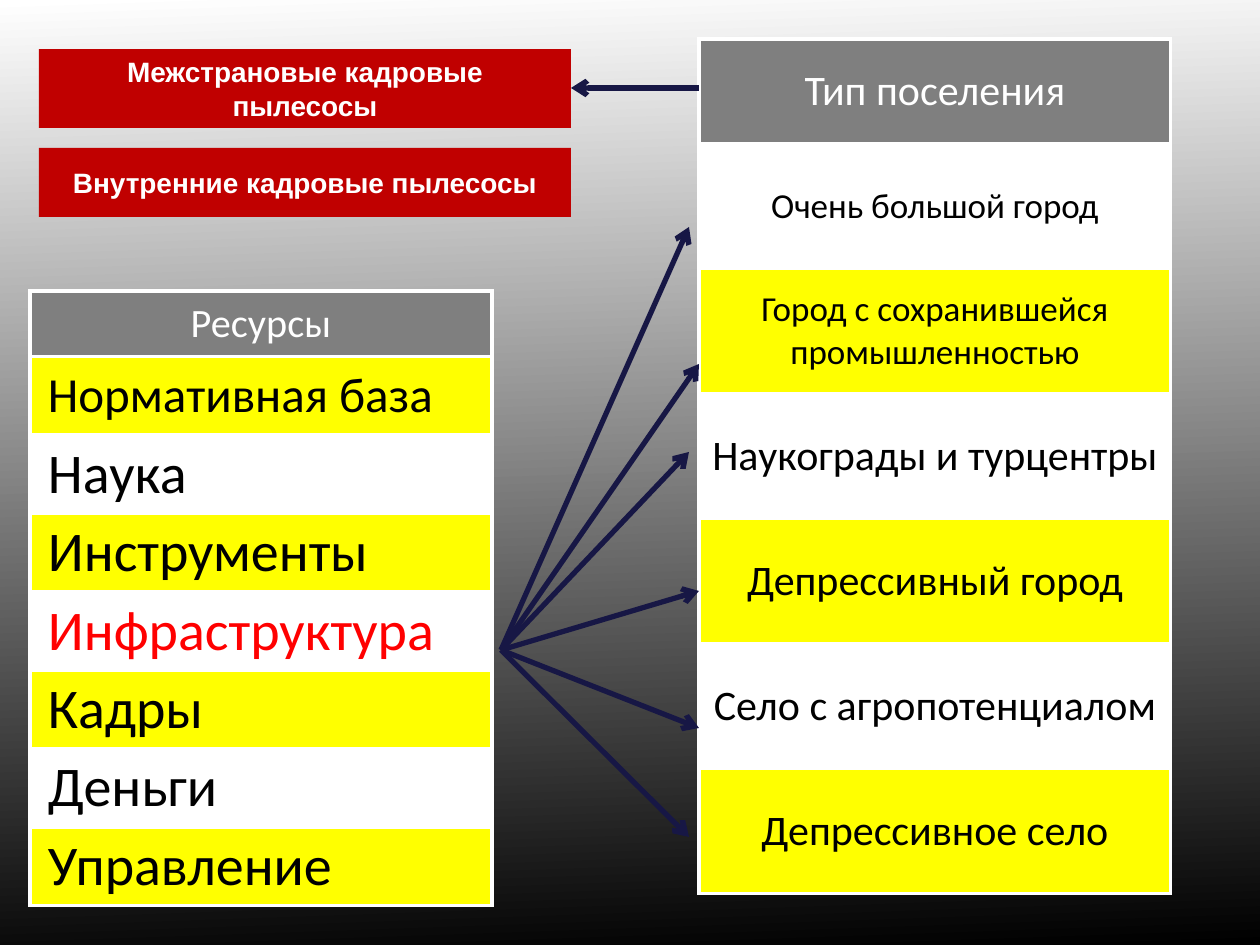
"""Build a slide linking resources to settlement types with arrows."""
import pptx
import pptx.dml.color
import pptx.enum.shapes
import pptx.enum.text
import pptx.oxml
import pptx.oxml.ns
import pptx.util

WHITE, BLACK, GREY, YELLOW = "FFFFFF", "000000", "7F7F7F", "FFFF00"
RED, CRIMSON, NAVY = "FF0000", "C00000", "171745"
ALIGN = pptx.enum.text.PP_ALIGN
MIDDLE = pptx.enum.text.MSO_ANCHOR.MIDDLE

RESOURCES = [
    ("Ресурсы", 23, WHITE),
    ("Нормативная база", 28, BLACK),
    ("Наука", 32, BLACK),
    ("Инструменты", 32, BLACK),
    ("Инфраструктура", 32, RED),
    ("Кадры", 32, BLACK),
    ("Деньги", 32, BLACK),
    ("Управление", 32, BLACK),
]
SETTLEMENTS = [
    ("Тип поселения", 24, WHITE),
    ("Очень большой город", 20, BLACK),
    ("Город с сохранившейся промышленностью", 20, BLACK),
    ("Наукограды и турцентры", 24, BLACK),
    ("Депрессивный город", 24, BLACK),
    ("Село с агропотенциалом", 24, BLACK),
    ("Депрессивное село", 24, BLACK),
]
DRAINS = [
    ("Межстрановые кадровые пылесосы", 49, 79),
    ("Внутренние кадровые пылесосы", 148, 69),
]
HUB = (501, 650)
TARGETS = [(689, 227), (699, 364), (689, 452), (699, 591), (699, 728), (689, 837)]
ARROWS = [(HUB, target) for target in TARGETS] + [((699, 88), (571, 88))]


def px(n):
    return pptx.util.Emu(round(n * 914400 / 126))


def rgb(color):
    return pptx.dml.color.RGBColor.from_string(color)


def paint(fill, color):
    fill.solid()
    fill.fore_color.rgb = rgb(color)


def write(tf, text, size, color, font, align, bold=False):
    p = tf.paragraphs[0]
    p.alignment = align
    r = p.add_run()
    r.text = text
    r.font.size = pptx.util.Pt(size)
    r.font.name = font
    r.font.bold = bold
    r.font.color.rgb = rgb(color)


def add_borders(cell):
    tc_pr = cell._tc.get_or_add_tcPr()
    for side in ("lnL", "lnR", "lnT", "lnB"):
        tc_pr.append(pptx.oxml.parse_xml(
            f'<a:{side} {pptx.oxml.ns.nsdecls("a")} w="25400"><a:solidFill>'
            f'<a:srgbClr val="{WHITE}"/></a:solidFill></a:{side}>'))


def add_list_table(s, rows, left, top, width, head_h, row_h, body_align, indent):
    heights = [head_h] + [row_h] * (len(rows) - 1)
    table = s.shapes.add_table(
        len(rows), 1, px(left), px(top), px(width), px(sum(heights))).table
    table.first_row = table.horz_banding = False
    for i, (text, size, color) in enumerate(rows):
        table.rows[i].height = px(heights[i])
        cell = table.cell(i, 0)
        add_borders(cell)
        paint(cell.fill, GREY if i == 0 else YELLOW if (i + len(rows)) % 2 else WHITE)
        cell.vertical_anchor = MIDDLE
        cell.margin_top = cell.margin_right = cell.margin_bottom = px(5)
        cell.margin_left = px(indent if i else 5)
        write(cell.text_frame, text, size, color, "Calibri",
              body_align if i else ALIGN.CENTER)


def add_arrow(s, start, end):
    line = s.shapes.add_connector(
        pptx.enum.shapes.MSO_CONNECTOR.STRAIGHT, *map(px, start + end))
    line.line.width = pptx.util.Pt(3)
    line.line.color.rgb = rgb(NAVY)
    ns = pptx.oxml.ns.nsdecls("a")
    line.line._get_or_add_ln().append(
        pptx.oxml.parse_xml(f'<a:tailEnd {ns} type="arrow"/>'))
    line._element.spPr.append(pptx.oxml.parse_xml(f"<a:effectLst {ns}/>"))


def add_drain(s, text, top, height):
    sp = s.shapes.add_shape(pptx.enum.shapes.MSO_SHAPE.RECTANGLE,
                            px(39), px(top), px(532), px(height))
    sp.shadow.inherit = False
    paint(sp.fill, CRIMSON)
    sp.line.fill.background()
    tf = sp.text_frame
    tf.word_wrap = True
    tf.vertical_anchor = MIDDLE
    write(tf, text, 16, WHITE, "Arial", ALIGN.CENTER, True)


def main():
    prs = pptx.Presentation()
    prs.slide_width, prs.slide_height = px(1260), px(945)
    s = prs.slides.add_slide(prs.slide_layouts[6])
    fill = s.background.fill
    fill.gradient()
    fill.gradient_angle = 272
    for stop, position, color in zip(fill.gradient_stops, (0, 1), (WHITE, BLACK)):
        stop.position = position
        stop.color.rgb = rgb(color)

    add_list_table(s, RESOURCES, 30, 291, 462, 66, 78, ALIGN.LEFT, 18)
    add_list_table(s, SETTLEMENTS, 699, 39, 472, 105, 125, ALIGN.CENTER, 5)
    for start, end in ARROWS:
        add_arrow(s, start, end)
    for drain in DRAINS:
        add_drain(s, *drain)
    prs.save("out.pptx")


if __name__ == "__main__":
    main()
